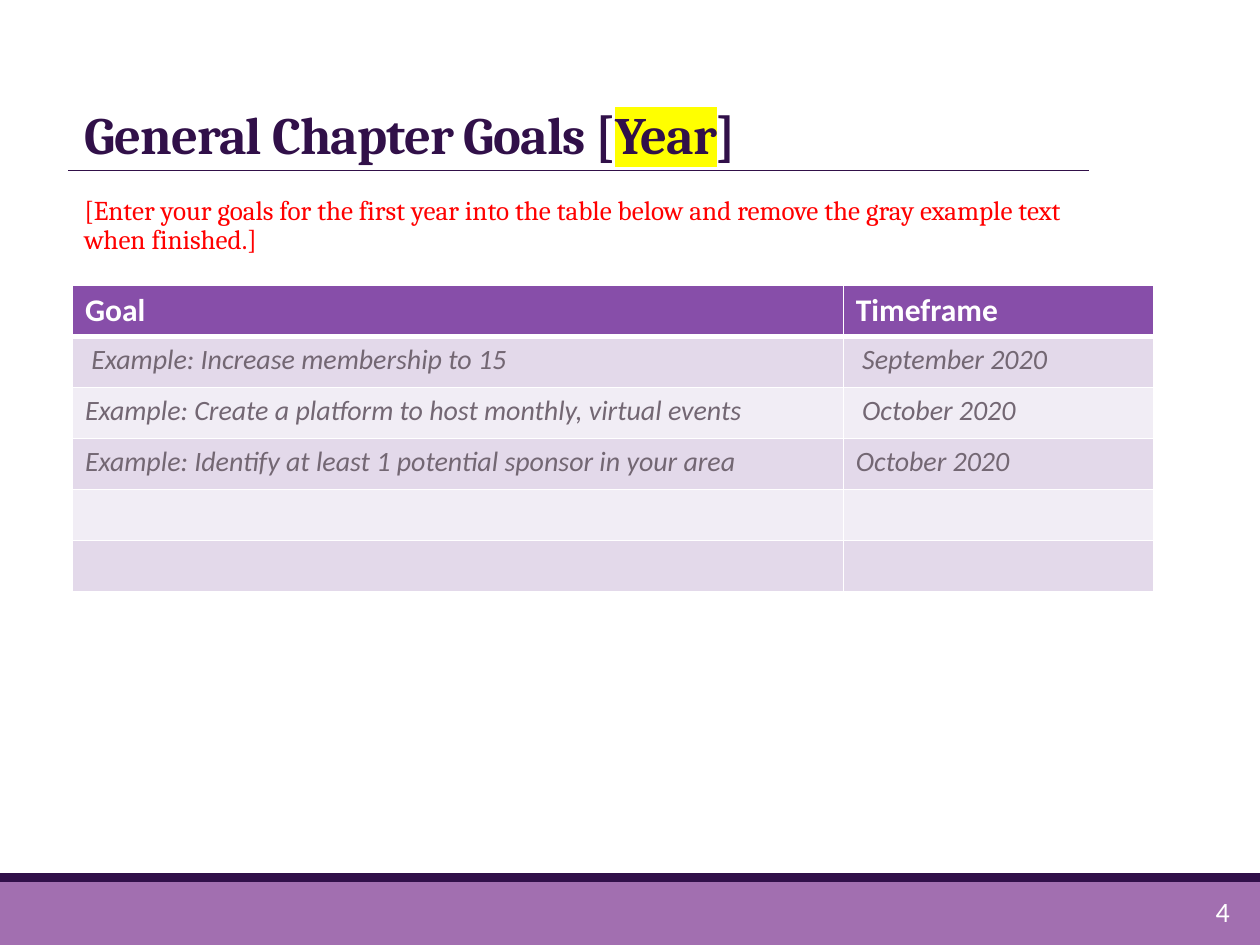
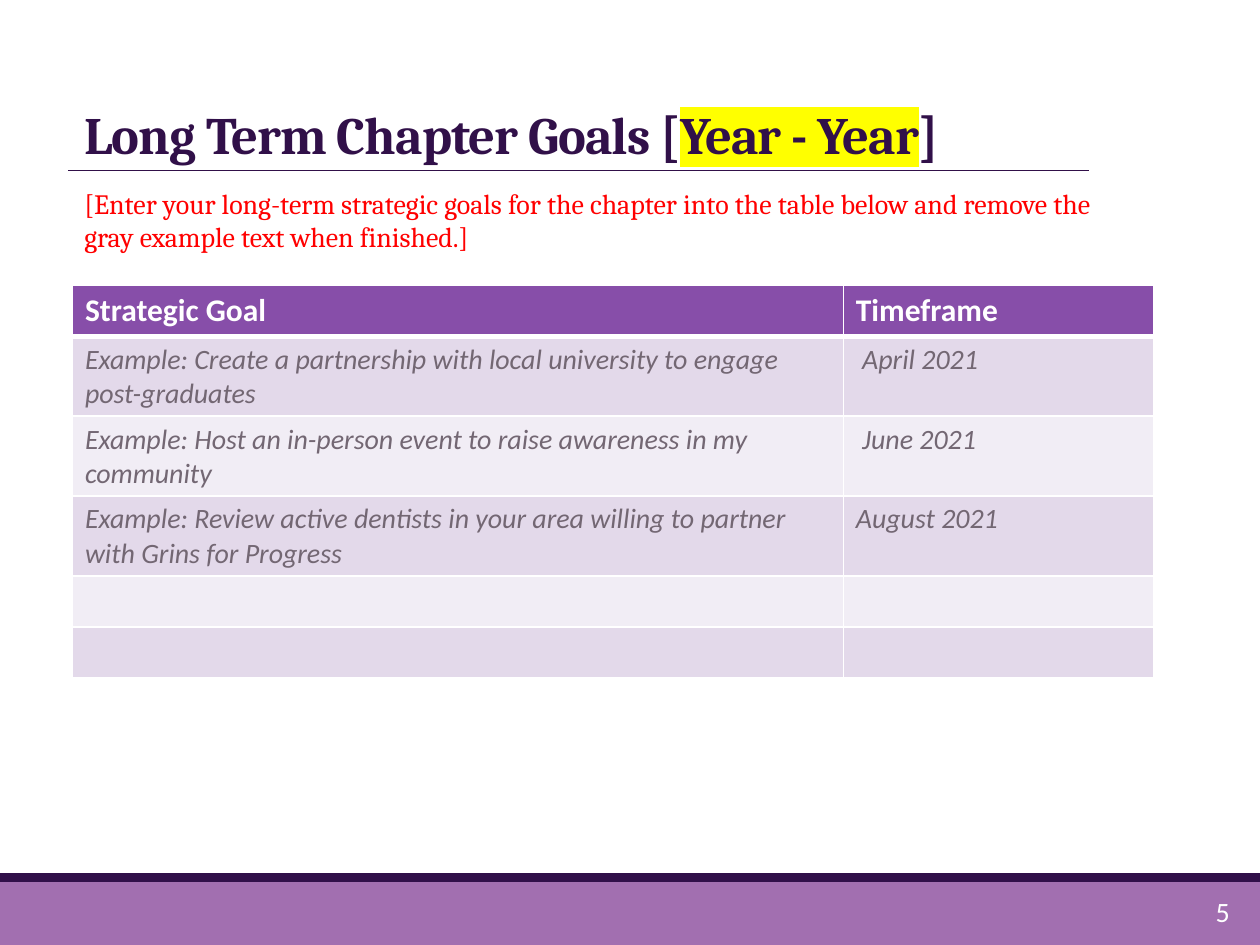
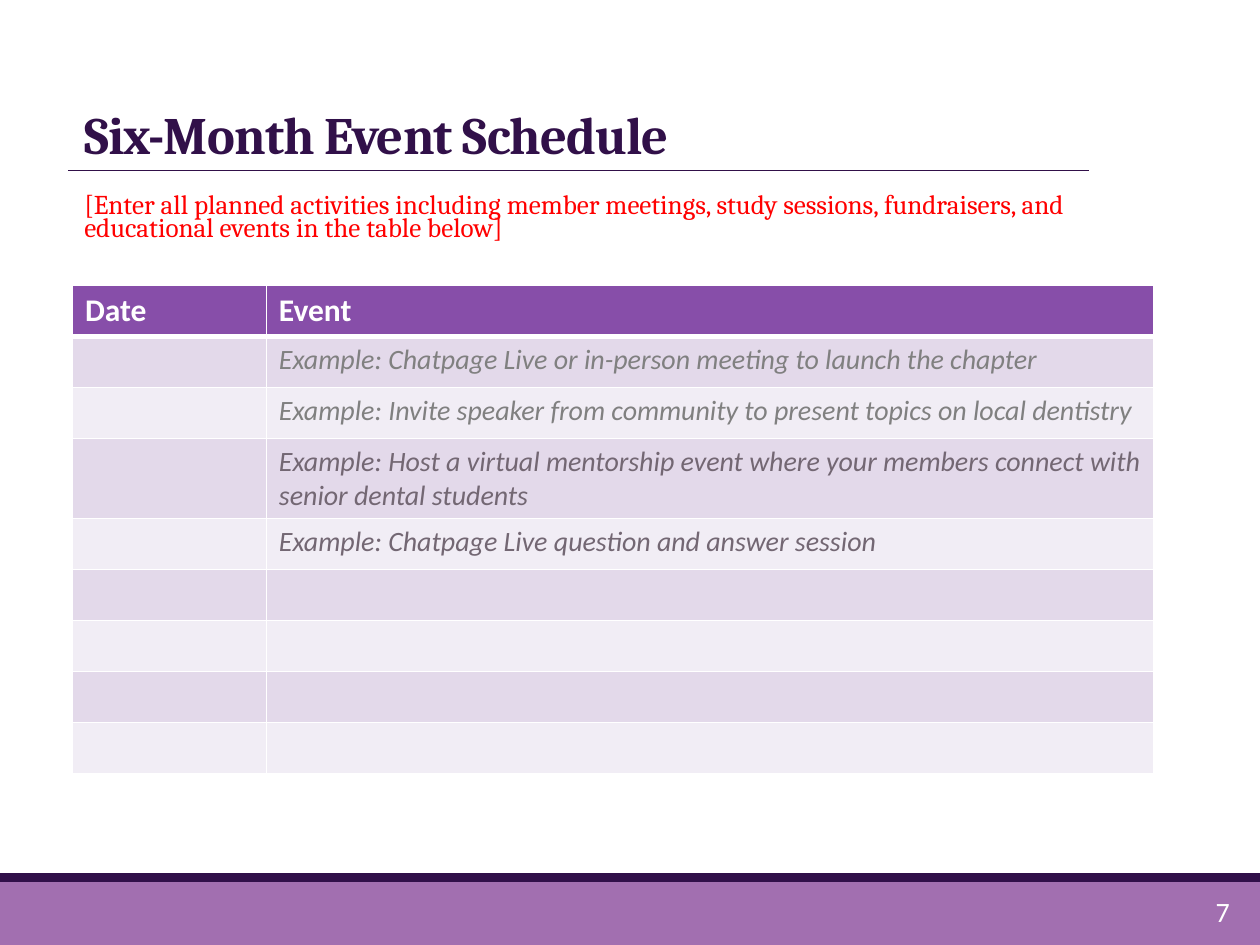
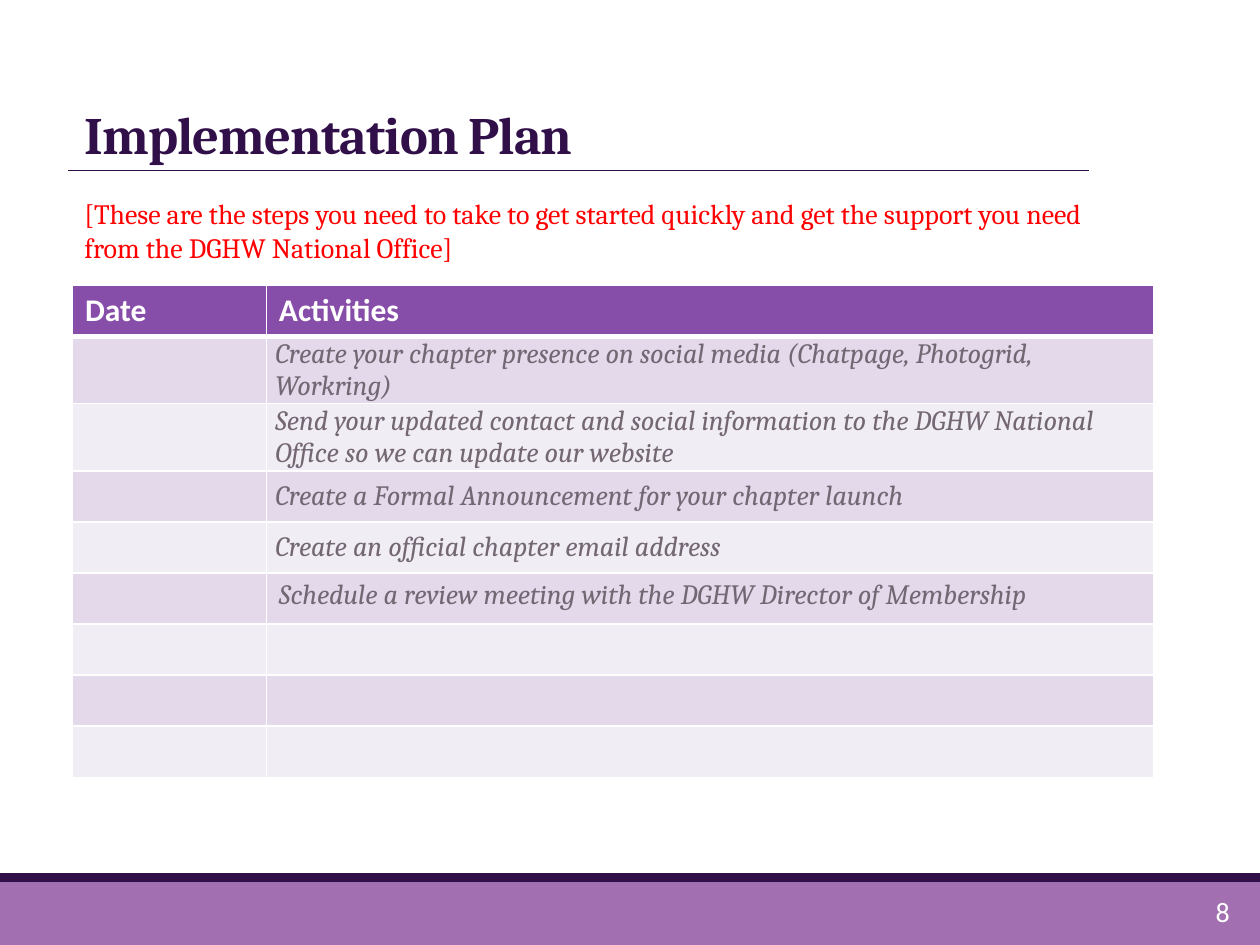
from lxml import etree
from pptx import Presentation
from pptx.dml.color import RGBColor
from pptx.enum.shapes import MSO_CONNECTOR, MSO_SHAPE
from pptx.enum.text import MSO_ANCHOR, MSO_AUTO_SIZE, PP_ALIGN
from pptx.oxml.ns import qn
from pptx.util import Cm, Pt

RECTANGLE = MSO_SHAPE.RECTANGLE
STRAIGHT = MSO_CONNECTOR.STRAIGHT
LEFT, RIGHT = PP_ALIGN.LEFT, PP_ALIGN.RIGHT
BOTTOM, MIDDLE = MSO_ANCHOR.BOTTOM, MSO_ANCHOR.MIDDLE

DARK, BAND, HEADER = "311049", "A26FB0", "874EA9"
STRIPES = ["F1EDF5", "E3D9EA"]
WHITE, RED, YELLOW = "FFFFFF", "FF0000", "FFFF00"
EXAMPLE, PALE_EXAMPLE = "736773", "808080"
SERIF, SANS = "Cambria", "Calibri"

GOAL_COLUMNS = [15.54, 6.26]
DATE_COLUMNS = [3.91, 17.89]
EMPTY = ("", "")

# title: text before, highlighted text, text after
# hint: text, top, height, size, line spacing
SLIDES = [
    {
        "number": "4",
        "title": ("General Chapter Goals [", "Year", "]"),
        "hint": ("[Enter your goals for the first year into the table below and "
                 "remove the gray example text when finished.]", 3.84, 1.55, 15.5, 0.9),
        "columns": GOAL_COLUMNS,
        "rows": [
            ("Goal", "Timeframe"),
            (" Example: Increase membership to 15", " September 2020"),
            ("Example: Create a platform to host monthly, virtual events", " October 2020"),
            ("Example: Identify at least 1 potential sponsor in your area", "October 2020"),
            EMPTY, EMPTY,
        ],
    },
    {
        "number": "5",
        "title": ("Long Term Chapter Goals [", "Year - Year", "]"),
        "hint": ("[Enter your long-term strategic goals for the chapter into the table "
                 "below and remove the gray example text when finished.]", 3.63, 1.93, 16, 1.0),
        "columns": GOAL_COLUMNS,
        "rows": [
            ("Strategic Goal", "Timeframe"),
            ("Example: Create a partnership with local university to engage post-graduates",
             " April 2021"),
            ("Example: Host an in-person event to raise awareness in my community",
             " June 2021"),
            ("Example: Review active dentists in your area willing to partner "
             "with Grins for Progress", "August 2021"),
            EMPTY, EMPTY,
        ],
    },
    {
        "number": "7",
        "title": ("Six-Month Event Schedule", "", ""),
        "hint": ("[Enter all planned activities including member meetings, study sessions, "
                 "fundraisers, and educational events in the table below]",
                 3.84, 1.22, 15.5, 0.7),
        "columns": DATE_COLUMNS,
        "pale_rows": [1, 2],
        "rows": [
            ("Date", "Event"),
            ("", "Example: Chatpage Live or in-person meeting to launch the chapter"),
            ("", "Example: Invite speaker from community to present topics on local dentistry"),
            ("", "Example: Host a virtual mentorship event where your members connect "
                 "with senior dental students"),
            ("", "Example: Chatpage Live question and answer session"),
            EMPTY, EMPTY, EMPTY, EMPTY,
        ],
    },
    {
        "number": "8",
        "title": ("Implementation Plan", "", ""),
        "hint": ("[These are the steps you need to take to get started quickly and get the "
                 "support you need from the DGHW National Office]", 3.84, 1.88, 16, 1.0),
        "columns": DATE_COLUMNS,
        "font": SERIF,
        "compact_rows": [1, 2, 3, 4],
        "rows": [
            ("Date", "Activities"),
            ("", "Create your chapter presence on social media (Chatpage, Photogrid, Workring)"),
            ("", "Send your updated contact and social information to the DGHW National "
                 "Office so we can update our website"),
            ("", "Create a Formal Announcement for your chapter launch"),
            ("", "Create an official chapter email address"),
            ("", "Schedule a review meeting with the DGHW Director of Membership"),
            EMPTY, EMPTY, EMPTY,
        ],
    },
]


def rgb(value):
    return RGBColor.from_string(value)


def style(paragraph, name, size, color, bold=False, italic=False):
    """Set the font that all runs of a paragraph share."""
    font = paragraph.font
    font.name, font.size, font.bold, font.italic = name, Pt(size), bold, italic
    font.color.rgb = rgb(color)


deck = Presentation()
deck.slide_width, deck.slide_height = Cm(25.4), Cm(19.05)
title_only = deck.slide_layouts[5]

for content in SLIDES:
    page = deck.slides.add_slide(title_only)

    # Footer bands and the rule under the title
    for top, height, color in [(17.78, 1.27, BAND), (17.6, 0.18, DARK)]:
        band = page.shapes.add_shape(RECTANGLE, 0, Cm(top), deck.slide_width, Cm(height))
        band.shadow.inherit = False
        band.fill.solid()
        band.fill.fore_color.rgb = rgb(color)
        band.line.fill.background()
    rule = page.shapes.add_connector(STRAIGHT, Cm(1.37), Cm(3.43), Cm(21.95), Cm(3.43))
    rule.line.color.rgb = rgb(DARK)
    rule.line.width = Pt(0.5)
    etree.SubElement(rule._element.spPr, qn("a:effectLst"))

    # Title
    title = page.shapes.title
    title.left, title.top, title.width, title.height = Cm(1.45), Cm(1.19), Cm(20.96), Cm(2.26)
    frame = title.text_frame
    frame.vertical_anchor = BOTTOM
    frame.auto_size = MSO_AUTO_SIZE.NONE
    paragraph = frame.paragraphs[0]
    paragraph.alignment = LEFT
    paragraph.line_spacing = 0.85
    style(paragraph, SERIF, 30, DARK, bold=True)
    paragraph.font._element.set("spc", "-50")
    before, marked, after = content["title"]
    for text in filter(None, (before, marked, after)):
        span = paragraph.add_run()
        span.text = text
        if text == marked:
            highlight = etree.SubElement(span.font._element, qn("a:highlight"))
            etree.SubElement(highlight, qn("a:srgbClr"), val=YELLOW)

    # Hint
    text, top, height, size, spacing = content["hint"]
    box = page.shapes.add_textbox(Cm(1.45), Cm(top), Cm(20.64), Cm(height))
    frame = box.text_frame
    frame.word_wrap = True
    frame.margin_left, frame.margin_right = Cm(0.25), 0
    paragraph = frame.paragraphs[0]
    paragraph.text = text
    paragraph.line_spacing = spacing
    style(paragraph, SERIF, size, RED)

    # Table
    columns, rows = content["columns"], content["rows"]
    table = page.shapes.add_table(len(rows), len(columns), Cm(1.46), Cm(5.75),
                                  Cm(sum(columns)), Cm(1.03 * len(rows))).table
    for column, width in zip(table.columns, columns):
        column.width = Cm(width)
    for row, texts in enumerate(rows):
        table.rows[row].height = Cm(1.03)
        for column, text in enumerate(texts):
            cell = table.cell(row, column)
            properties = cell._tc.get_or_add_tcPr()
            for side in ("L", "R", "T", "B"):
                thick = (row, side) in [(0, "B"), (1, "T")]
                border = etree.SubElement(properties, qn(f"a:ln{side}"),
                                          w=str(Pt(3 if thick else 1)))
                fill = etree.SubElement(border, qn("a:solidFill"))
                etree.SubElement(fill, qn("a:srgbClr"), val=WHITE)
            cell.fill.solid()
            cell.fill.fore_color.rgb = rgb(STRIPES[row % 2] if row else HEADER)
            if not text:
                continue
            paragraph = cell.text_frame.paragraphs[0]
            paragraph.text = text
            if row == 0:
                style(paragraph, SANS, 18, WHITE, bold=True)
                continue
            color = PALE_EXAMPLE if row in content.get("pale_rows", []) else EXAMPLE
            style(paragraph, content.get("font", SANS), 16, color, italic=True)
            if row in content.get("compact_rows", []):
                cell.vertical_anchor = MIDDLE
                cell.margin_left = Cm(0.18)
                cell.margin_right = cell.margin_top = cell.margin_bottom = 0

    # Page number
    box = page.shapes.add_textbox(Cm(22.3), Cm(17.9), Cm(2.74), Cm(1.02))
    box.text_frame.word_wrap = True
    paragraph = box.text_frame.paragraphs[0]
    paragraph.text = content["number"]
    paragraph.alignment = RIGHT
    style(paragraph, SANS, 16, WHITE)

deck.save("out.pptx")
